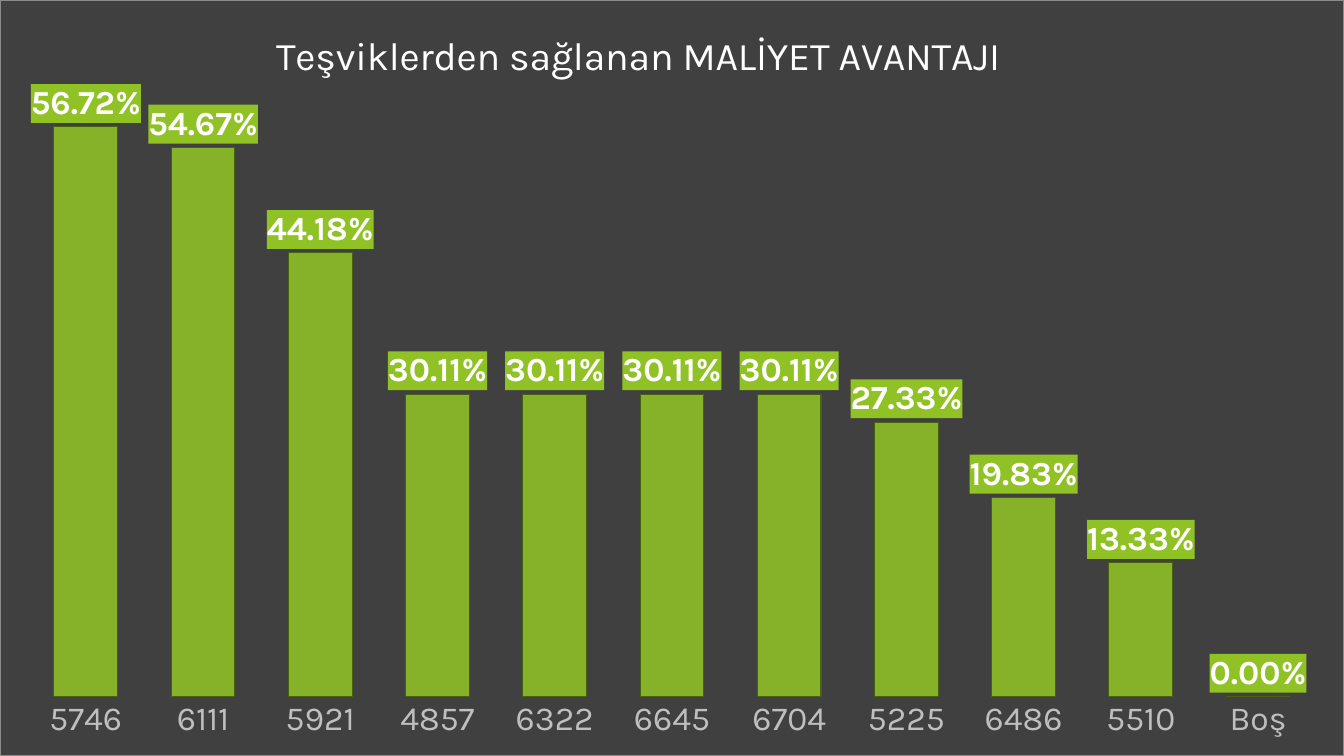
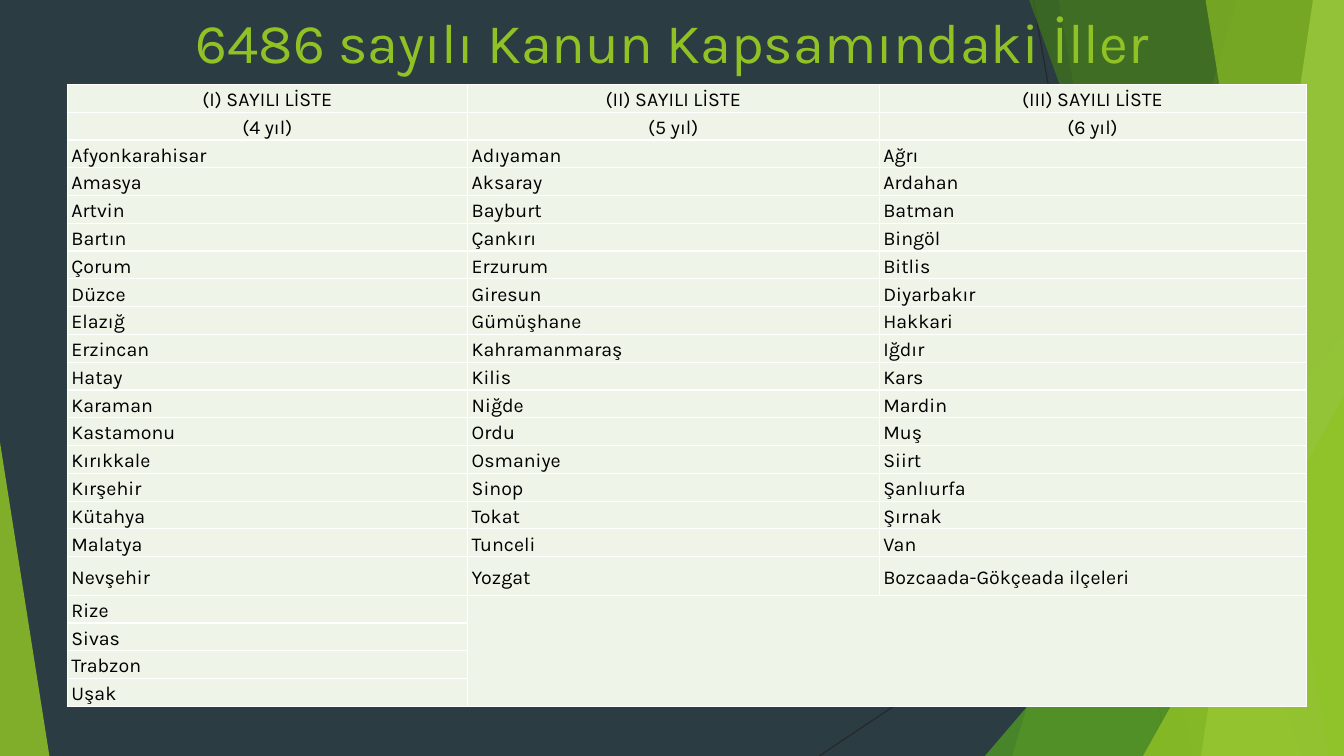
from itertools import zip_longest

from lxml import etree
from pptx import Presentation
from pptx.chart.data import CategoryChartData
from pptx.dml.color import RGBColor
from pptx.enum.chart import XL_CHART_TYPE, XL_LABEL_POSITION, XL_TICK_MARK
from pptx.enum.shapes import MSO_CONNECTOR, MSO_SHAPE
from pptx.enum.text import MSO_ANCHOR, PP_ALIGN
from pptx.oxml import parse_xml
from pptx.oxml.ns import nsdecls, qn
from pptx.util import Pt

COLUMNS = XL_CHART_TYPE.COLUMN_CLUSTERED
OUTSIDE = XL_LABEL_POSITION.OUTSIDE_END
NO_TICK = XL_TICK_MARK.NONE
STRAIGHT = MSO_CONNECTOR.STRAIGHT
TRIANGLE = MSO_SHAPE.RIGHT_TRIANGLE
SLOPED = MSO_SHAPE.ISOSCELES_TRIANGLE
TOP, MIDDLE = MSO_ANCHOR.TOP, MSO_ANCHOR.MIDDLE
LEFT, CENTER = PP_ALIGN.LEFT, PP_ALIGN.CENTER

SLATE = RGBColor(0x2C, 0x3C, 0x43)
CHARCOAL = RGBColor(0x40, 0x40, 0x40)
NEAR_BLACK = RGBColor(0x26, 0x26, 0x26)
GRAY = RGBColor(0x8C, 0x8C, 0x8C)
SILVER = RGBColor(0xBF, 0xBF, 0xBF)
LIME = RGBColor(0x90, 0xC2, 0x26)
GREEN = RGBColor(0x54, 0xA0, 0x21)
FOREST = RGBColor(0x3F, 0x78, 0x19)
PALE_LIME = RGBColor(0xC0, 0xE4, 0x74)
OLIVE = RGBColor(0x48, 0x61, 0x13)
MINT = RGBColor(0xEE, 0xF4, 0xE8)
WHITE = RGBColor(0xFF, 0xFF, 0xFF)
BLACK = RGBColor(0, 0, 0)

FONT = "Karla"
WIDTH, HEIGHT = 960, 540
BLEED = -0.6

RATES = {
    "5746": 0.5672, "6111": 0.5467, "5921": 0.4418, "4857": 0.3011,
    "6322": 0.3011, "6645": 0.3011, "6704": 0.3011, "5225": 0.2733,
    "6486": 0.1983, "5510": 0.1333, "Boş": 0,
}

PROVINCES = [
    ["(I) SAYILI LİSTE", "(4 yıl)", "Afyonkarahisar", "Amasya", "Artvin",
     "Bartın", "Çorum", "Düzce", "Elazığ", "Erzincan", "Hatay", "Karaman",
     "Kastamonu", "Kırıkkale", "Kırşehir", "Kütahya", "Malatya", "Nevşehir",
     "Rize", "Sivas", "Trabzon", "Uşak"],
    ["(II) SAYILI LİSTE", "(5 yıl)", "Adıyaman", "Aksaray", "Bayburt",
     "Çankırı", "Erzurum", "Giresun", "Gümüşhane", "Kahramanmaraş", "Kilis",
     "Niğde", "Ordu", "Osmaniye", "Sinop", "Tokat", "Tunceli", "Yozgat"],
    ["(III) SAYILI LİSTE", "(6 yıl)", "Ağrı", "Ardahan", "Batman", "Bingöl",
     "Bitlis", "Diyarbakır", "Hakkari", "Iğdır", "Kars", "Mardin", "Muş",
     "Siirt", "Şanlıurfa", "Şırnak", "Van", "Bozcaada-Gökçeada ilçeleri"],
]
HEADER_ROWS = 2
LAST_FULL_ROW = 17


def style_font(font, size, color, bold=False):
    font.name, font.size, font.bold = FONT, Pt(size), bold
    font.color.rgb = color


def put_text(frame, text, size, color, align=CENTER, spacing=None):
    paragraph = frame.paragraphs[0]
    paragraph.alignment = align
    if spacing:
        paragraph.line_spacing = spacing
    run = paragraph.add_run()
    run.text = text
    style_font(run.font, size, color)


def set_opacity(element, percent):
    color = next(element.iter(qn("a:srgbClr")))
    etree.SubElement(color, qn("a:alpha")).set("val", str(percent * 1000))


def fill_xml(color):
    return f'<a:solidFill><a:srgbClr val="{color}"/></a:solidFill>'


def chart_panel(color, border=""):
    return parse_xml(f'<c:spPr {nsdecls("c", "a")}>{fill_xml(color)}{border}</c:spPr>')


def set_layout(parent, index, **places):
    for automatic in parent.findall(qn("c:layout")):
        parent.remove(automatic)
    settings = "".join(f'<c:{key} val="{value}"/>' for key, value in places.items())
    parent.insert(index, parse_xml(
        f'<c:layout {nsdecls("c")}><c:manualLayout>{settings}</c:manualLayout></c:layout>'))


class Deck:
    def __init__(self):
        self.presentation = Presentation()
        self.presentation.slide_width = Pt(WIDTH)
        self.presentation.slide_height = Pt(HEIGHT)
        self.layout = self.presentation.slide_layouts[6]
        self.slide = None

    def new_slide(self):
        self.slide = self.presentation.slides.add_slide(self.layout)

    def share_backdrop(self):
        backdrop = self.layout.background.fill
        backdrop.solid()
        backdrop.fore_color.rgb = SLATE
        for placeholder in list(self.layout.placeholders):
            placeholder.element.getparent().remove(placeholder.element)
        for shape in list(self.slide.shapes):
            self.layout.shapes.element.append(shape.element)

    def line(self, x1, y1, x2, y2):
        line = self.slide.shapes.add_connector(STRAIGHT, Pt(x1), Pt(y1), Pt(x2), Pt(y2))
        line.line.color.rgb = NEAR_BLACK
        line.line.width = Pt(0.75)
        etree.SubElement(line.element.find(qn("p:spPr")), qn("a:effectLst"))

    def paint(self, shape, color, opacity):
        shape.shadow.inherit = False
        shape.fill.solid()
        shape.fill.fore_color.rgb = color
        shape.line.fill.background()
        set_opacity(shape.element.find(qn("p:spPr")), opacity)

    def band(self, top_x, bottom_x, color, opacity):
        outline = self.slide.shapes.build_freeform(Pt(top_x), Pt(BLEED))
        outline.add_line_segments([(Pt(WIDTH), Pt(BLEED)), (Pt(WIDTH), Pt(HEIGHT)),
                                   (Pt(bottom_x), Pt(HEIGHT))])
        self.paint(outline.convert_to_shape(), color, opacity)

    def triangle(self, left, top, width, peak, color, opacity):
        corner = self.slide.shapes.add_shape(
            SLOPED, Pt(left), Pt(top), Pt(width), Pt(HEIGHT - top))
        corner.adjustments[0] = peak
        self.paint(corner, color, opacity)

    def title(self, text):
        box = self.slide.shapes.add_textbox(Pt(66), Pt(2), Pt(828), Pt(104))
        box.text_frame.word_wrap = True
        box.text_frame.vertical_anchor = TOP
        put_text(box.text_frame, text, size=40, color=LIME)

    def column_chart(self, title, rates):
        data = CategoryChartData(number_format="0.00%")
        data.categories = list(rates)
        data.add_series("Series 1", list(rates.values()))
        chart = self.slide.shapes.add_chart(
            COLUMNS, 0, 0, Pt(WIDTH), Pt(HEIGHT), data).chart
        style_font(chart.font, 24, WHITE)
        chart.has_legend = False
        chart.has_title = True
        put_text(chart.chart_title.text_frame, title, size=28, color=WHITE)

        values = chart.value_axis
        values.minimum_scale, values.maximum_scale = 0, 0.6
        values.has_major_gridlines = False
        values.visible = False
        categories = chart.category_axis
        categories.major_tick_mark = categories.minor_tick_mark = NO_TICK
        categories.format.line.fill.background()
        style_font(categories.tick_labels.font, 24, SILVER)

        plot = chart.plots[0]
        plot.gap_width = 84
        plot.vary_by_categories = False
        series = plot.series[0]
        series.format.fill.solid()
        series.format.fill.fore_color.rgb = LIME
        series.format.line.color.rgb = OLIVE
        series.format.line.width = Pt(0.75)
        labels = series.data_labels
        labels.show_value = True
        labels.number_format = "0.00%"
        labels.number_format_is_linked = False
        labels.position = OUTSIDE
        style_font(labels.font, 24, WHITE, bold=True)

        space = chart.element
        set_opacity(next(space.iter(qn("c:ser"))), 88)
        label_format = next(space.iter(qn("c:dLbls"))).find(qn("c:numFmt"))
        label_format.addnext(chart_panel(LIME))
        border = f'<a:ln w="{Pt(0.5)}">{fill_xml(GRAY)}</a:ln>'
        space.find(qn("c:chart")).addnext(chart_panel(CHARCOAL, border))
        set_layout(next(space.iter(qn("c:title"))), 1,
                   xMode="edge", yMode="edge", x=0.2, y=0.03)
        set_layout(next(space.iter(qn("c:plotArea"))), 0,
                   layoutTarget="inner", xMode="edge", yMode="edge",
                   x=0.02, y=0.124, w=0.96, h=0.798)

    def cell(self, cell, text, align):
        cell.vertical_anchor = MIDDLE
        cell.margin_left = cell.margin_right = Pt(3)
        cell.margin_top = cell.margin_bottom = 0
        put_text(cell.text_frame, text, size=14, color=BLACK, align=align, spacing=1.15)
        properties = cell._tc.get_or_add_tcPr()
        for side in "LRTB":
            properties.append(parse_xml(
                f'<a:ln{side} {nsdecls("a")} w="{Pt(1)}">{fill_xml(WHITE)}</a:ln{side}>'))
        cell.fill.solid()
        cell.fill.fore_color.rgb = MINT

    def province_table(self, lists):
        rows = list(zip_longest(*lists, fillvalue=""))
        widths = [286, 294, 305]
        heights = [27.5 if r == LAST_FULL_ROW else 19.87 for r in range(len(rows))]
        table = self.slide.shapes.add_table(
            len(rows), len(widths), Pt(48), Pt(60.3),
            Pt(sum(widths)), Pt(sum(heights))).table
        table.first_row = table.horz_banding = False
        for column, width in zip(table.columns, widths):
            column.width = Pt(width)
        for r, (row, height) in enumerate(zip(rows, heights)):
            table.rows[r].height = Pt(height)
            for c, text in enumerate(row):
                self.cell(table.cell(r, c), text, CENTER if r < HEADER_ROWS else LEFT)
        table.cell(LAST_FULL_ROW + 1, 1).merge(table.cell(len(rows) - 1, len(widths) - 1))


def draw_backdrop(deck):
    deck.line(738, 0, 834, HEIGHT)
    deck.line(WIDTH, 290, 585, HEIGHT)
    deck.band(884, 723, LIME, 30)
    deck.band(756, 852, LIME, 20)
    deck.triangle(703.5, 240, 256.5, 1, GREEN, 72)
    deck.band(735, 929.5, FOREST, 70)
    deck.band(938, 858, PALE_LIME, 70)
    deck.band(861, 949, LIME, 65)
    deck.triangle(816.5, 283, 143.5, 1, LIME, 80)
    deck.triangle(0, 316, 35.3, 0, LIME, 85)


def main():
    deck = Deck()
    deck.new_slide()
    draw_backdrop(deck)
    deck.share_backdrop()
    deck.column_chart("Teşviklerden sağlanan MALİYET AVANTAJI", RATES)

    deck.new_slide()
    deck.title("6486 sayılı Kanun Kapsamındaki İller")
    deck.province_table(PROVINCES)
    deck.presentation.save("out.pptx")


if __name__ == "__main__":
    main()
